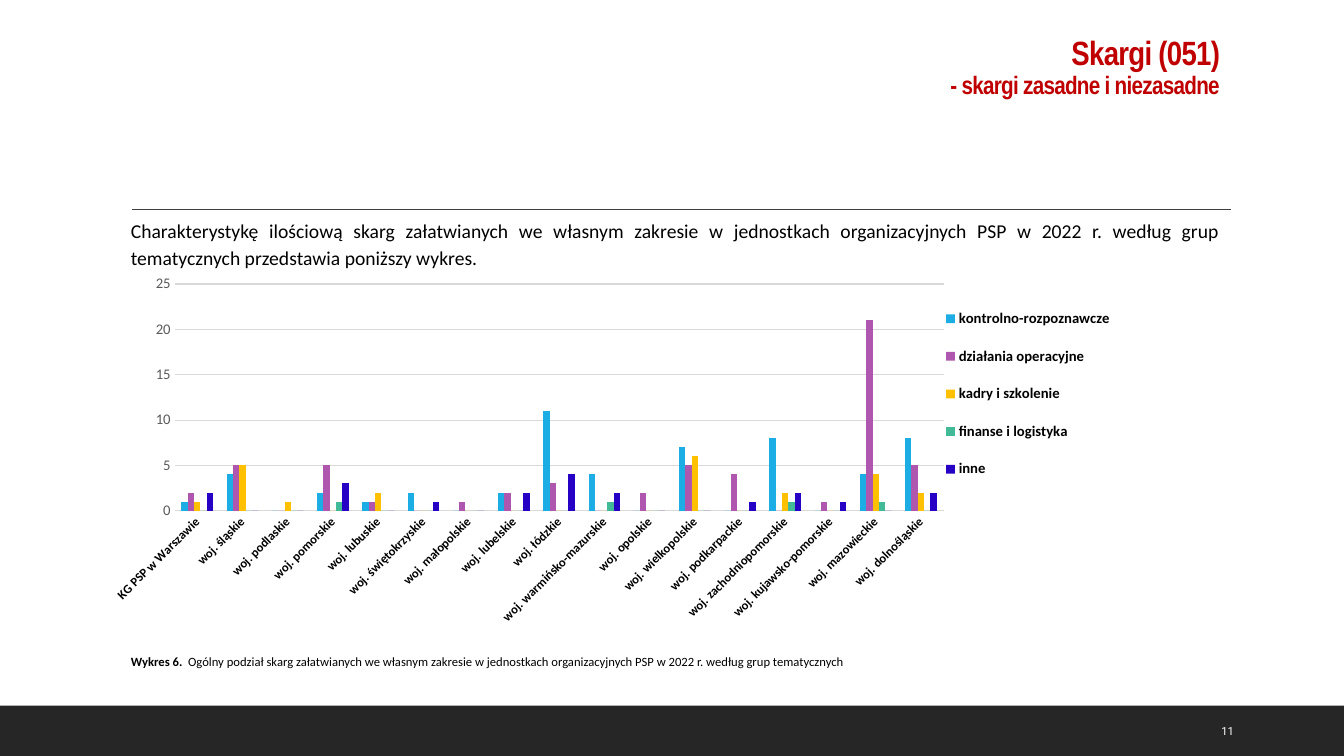
from lxml.etree import SubElement
from pptx import Presentation
from pptx.chart.data import CategoryChartData as ChartData
from pptx.dml.color import RGBColor as RGB
from pptx.enum.chart import XL_CHART_TYPE as Chart, XL_LEGEND_POSITION as Side, XL_TICK_MARK as Tick
from pptx.enum.shapes import MSO_CONNECTOR as Conn, MSO_SHAPE as Shape
from pptx.enum.text import MSO_ANCHOR as Anchor, PP_ALIGN as Align
from pptx.oxml.ns import qn
from pptx.util import Pt

WIDE, HIGH = 960, 540
LEFT, SPAN = 86.4, 792

CATS = ["KG PSP w Warszawie"] + ["woj. " + name for name in (
    "śląskie", "podlaskie", "pomorskie", "lubuskie", "świętokrzyskie",
    "małopolskie", "lubelskie", "łódzkie", "warmińsko-mazurskie", "opolskie",
    "wielkopolskie", "podkarpackie", "zachodniopomorskie",
    "kujawsko-pomorskie", "mazowieckie", "dolnośląskie")]
GROUPS = [
    ("kontrolno-rozpoznawcze", "1CADE4", (1, 4, 0, 2, 1, 2, 0, 2, 11, 4, 0, 7, 0, 8, 0, 4, 8)),
    ("działania operacyjne", "AF57AF", (2, 5, 0, 5, 1, 0, 1, 2, 3, 0, 2, 5, 4, 0, 1, 21, 5)),
    ("kadry i szkolenie", "FFC000", (1, 5, 1, 0, 2, 0, 0, 0, 0, 0, 0, 6, 0, 2, 0, 4, 2)),
    ("finanse i logistyka", "42BA97", (0, 0, 0, 1, 0, 0, 0, 0, 0, 1, 0, 0, 0, 1, 0, 1, 0)),
    ("inne", "2601C5", (2, 0, 0, 3, 0, 1, 0, 2, 4, 2, 0, 0, 1, 2, 1, 0, 2)),
]


def color(code):
    return RGB.from_string(code)


def paint(line, code, width):
    line.color.rgb = color(code)
    line.width = Pt(width)


def place(parent, index, box):
    """Give a chart part a fixed place, as fractions of the chart."""
    old = parent.find(qn("c:layout"))
    if old is not None:
        parent.remove(old)
    layout = parent.makeelement(qn("c:layout"))
    parent.insert(index, layout)
    manual = SubElement(layout, qn("c:manualLayout"))
    parts = {"xMode": "edge", "yMode": "edge", **dict(zip("xywh", box))}
    if parent.tag == qn("c:plotArea"):
        parts = {"layoutTarget": "inner", **parts}
    for tag, value in parts.items():
        SubElement(manual, qn("c:" + tag)).set("val", str(value))


class Page:
    style = {"name": "Calibri", "size": 9, "bold": False, "color": "000000"}

    def __init__(self, slide):
        self.slide = slide

    def font(self, font, **changes):
        for key, value in {**self.style, **changes}.items():
            if key == "color":
                font.color.rgb = color(value)
            else:
                setattr(font, key, Pt(value) if key == "size" else value)

    def rect(self, box, fill):
        shape = self.slide.shapes.add_shape(Shape.RECTANGLE, *map(Pt, box))
        shape.shadow.inherit = False
        shape.fill.solid()
        shape.fill.fore_color.rgb = color(fill)
        shape.line.fill.background()

    def line(self, ends, code, width):
        rule = self.slide.shapes.add_connector(Conn.STRAIGHT, *map(Pt, ends))
        paint(rule.line, code, width)
        SubElement(rule._element.spPr, qn("a:effectLst"))

    def text(self, box, runs, anchor=Anchor.TOP, track=0, **layout):
        """Add one paragraph; runs are (text, font changes), None breaks the line."""
        frame = self.slide.shapes.add_textbox(*map(Pt, box)).text_frame
        frame.word_wrap = True
        frame.vertical_anchor = anchor
        para = frame.paragraphs[0]
        for key, value in layout.items():
            setattr(para, key, value)
        for item in runs:
            if item is None:
                para.add_line_break()
                continue
            run = para.add_run()
            run.text = item[0]
            self.font(run.font, **item[1])
            if track:
                run._r.get_or_add_rPr().set("spc", str(track))

    def chart(self, box, cats, groups):
        data = ChartData()
        data.categories = cats
        for name, _, values in groups:
            data.add_series(name, values)
        chart = self.slide.shapes.add_chart(
            Chart.COLUMN_CLUSTERED, *map(Pt, box), data).chart
        chart.has_title = False
        self.font(chart.font, name="Roboto", size=10)
        plot = chart.plots[0]
        plot.vary_by_categories = False
        plot.gap_width, plot.overlap = 219, 0
        for series, (_, fill, _) in zip(plot.series, groups):
            series.format.fill.solid()
            series.format.fill.fore_color.rgb = color(fill)
            series.invert_if_negative = False
        self.axes(chart.category_axis, chart.value_axis)
        chart.has_legend = True
        legend = chart.legend
        legend.position = Side.RIGHT
        legend.include_in_layout = False
        self.font(legend.font, size=10.5, bold=True)
        place(legend._element, 1, (0.81, 0.05, 0.18, 0.55))
        place(chart._chartSpace.chart.plotArea, 0, (0.102, 0.034, 0.719, 0.6))

    def axes(self, base, scale):
        for axis in (base, scale):
            axis.major_tick_mark = axis.minor_tick_mark = Tick.NONE
        self.font(base.tick_labels.font, bold=True)
        slant = base._element.find(qn("c:txPr")).find(qn("a:bodyPr"))
        slant.set("rot", "-2700000")
        slant.set("vert", "horz")
        paint(base.format.line, "D9D9D9", 0.75)
        self.font(scale.tick_labels.font, size=10.5, color="595959")
        scale.minimum_scale, scale.maximum_scale, scale.major_unit = 0, 25, 5
        scale.format.line.fill.background()
        scale.has_major_gridlines = True
        paint(scale.major_gridlines.format.line, "D9D9D9", 0.75)


def main():
    deck = Presentation()
    deck.slide_width, deck.slide_height = Pt(WIDE), Pt(HIGH)
    page = Page(deck.slides.add_slide(deck.slide_layouts[6]))
    page.rect((0, 504, WIDE, 36), "262626")
    page.line((94.3, 149.5, 879, 149.5), "404040", 1)
    head = {"name": "Arial Narrow", "bold": True, "color": "C00000"}
    page.text((LEFT, 22.3, SPAN, 114.5), [
        ("Skargi (051)", {**head, "size": 24}), None,
        ("- skargi zasadne i niezasadne", {**head, "size": 18})],
        track=-50, alignment=Align.RIGHT, line_spacing=0.9)
    page.text((LEFT, 150.5, SPAN, 48), [
        ("Charakterystykę ilościową skarg załatwianych we własnym zakresie "
         "w jednostkach organizacyjnych PSP w 2022 r. według grup "
         "tematycznych przedstawia poniższy wykres.", {"size": 14})],
        alignment=Align.JUSTIFY, line_spacing=1.15)
    page.text((865.4, 507.6, 61.2, 28.8), [
        ("11", {"name": "Roboto", "size": 8, "color": "FFFFFF"})],
        anchor=Anchor.MIDDLE)
    page.chart((46.8, 193.7, 763.9, 270), CATS, GROUPS)
    page.text((LEFT, 463.7, 577.4, 18), [
        ("Wykres 6.  ", {"bold": True}),
        ("Ogólny podział skarg załatwianych we własnym zakresie w jednostkach "
         "organizacyjnych PSP w 2022 r. według grup tematycznych", {})])
    deck.save("out.pptx")


if __name__ == "__main__":
    main()
